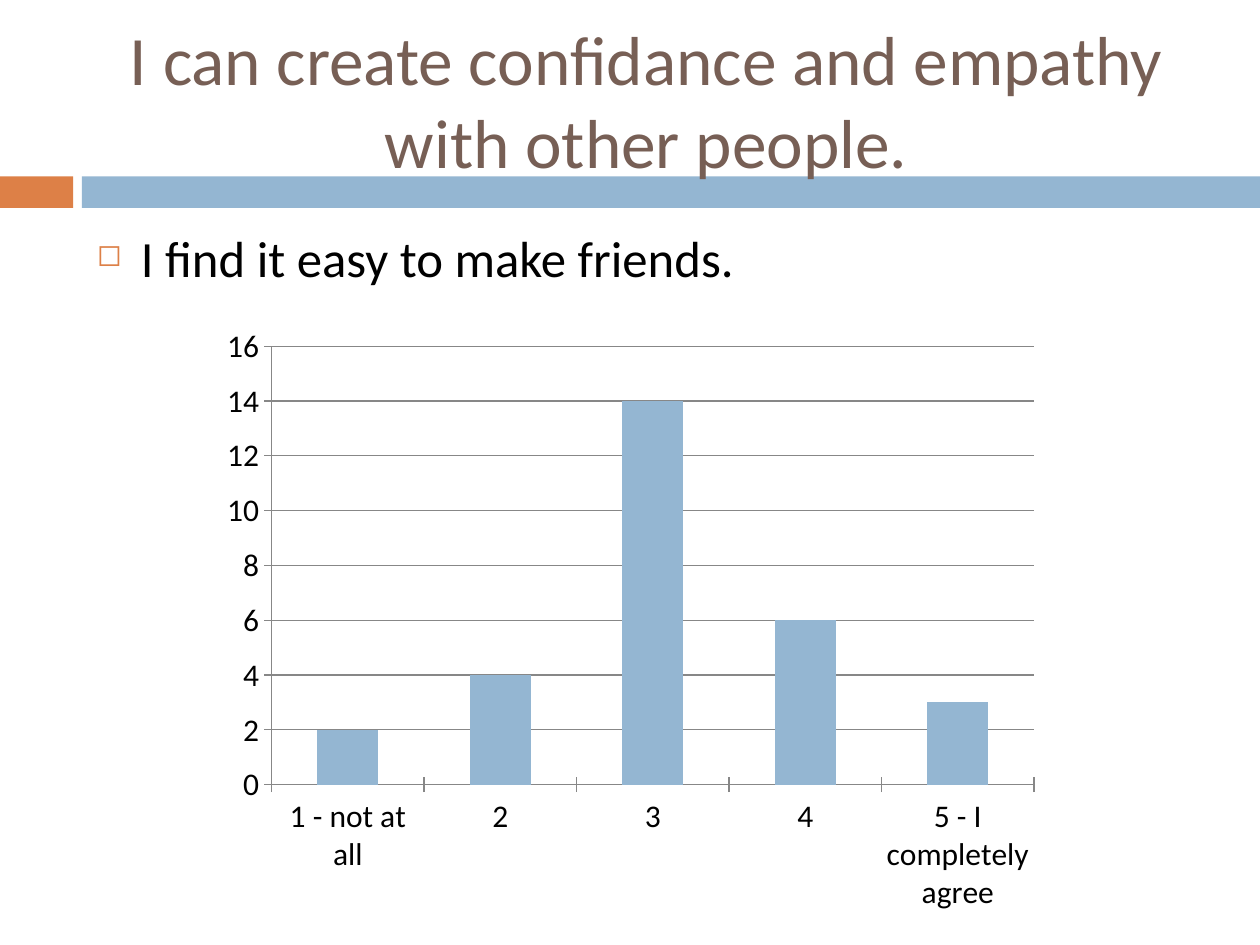
from dataclasses import dataclass

from lxml import etree
from pptx import Presentation
from pptx.chart.data import CategoryChartData
from pptx.dml.color import RGBColor
from pptx.enum.chart import XL_CHART_TYPE, XL_TICK_MARK
from pptx.enum.shapes import MSO_SHAPE
from pptx.enum.text import MSO_ANCHOR, PP_ALIGN
from pptx.oxml.ns import qn
from pptx.util import Inches, Pt

RECT = MSO_SHAPE.RECTANGLE
COLUMN = XL_CHART_TYPE.COLUMN_CLUSTERED
CROSS = XL_TICK_MARK.CROSS
MIDDLE, TOP = MSO_ANCHOR.MIDDLE, MSO_ANCHOR.TOP
CENTER, LEFT = PP_ALIGN.CENTER, PP_ALIGN.LEFT


@dataclass(frozen=True)
class Theme:
    font: str = "Calibri"
    orange: str = "DD8047"
    blue: str = "94B6D2"
    brown: str = "775F55"
    black: str = "000000"
    grid: str = "878787"
    title: float = 39.6
    body: float = 29
    chart: float = 18


@dataclass(frozen=True)
class Box:
    left: float
    top: float
    width: float
    height: float

    def place(self):
        return [Inches(n) for n in (self.left, self.top, self.width, self.height)]


@dataclass(frozen=True)
class Band:
    box: Box
    color: str


@dataclass(frozen=True)
class Label:
    box: Box
    text: str
    size: float
    color: str
    align: PP_ALIGN
    anchor: MSO_ANCHOR


THEME = Theme()
BANDS = [
    Band(Box(0, 1.4, 0.58, 0.25), THEME.orange),
    Band(Box(0.65, 1.4, 9.35, 0.25), THEME.blue),
]
TITLE = Label(Box(0.67, 0.25, 8.92, 1.08),
              "I can create confidance and empathy with other people.",
              THEME.title, THEME.brown, CENTER, MIDDLE)
POINT = Label(Box(0.67, 1.75, 8.92, 4.92), "I find it easy to make friends.",
              THEME.body, THEME.black, LEFT, TOP)
PLOT = Box(1.67, 2.5, 6.67, 4.83)
SCORES = {"1 - not at all": 2, "2": 4, "3": 14, "4": 6, "5 - I completely agree": 3}


def style(font, size: float, color: str) -> None:
    font.name = THEME.font
    font.size = Pt(size)
    font.color.rgb = RGBColor.from_string(color)


def draw_band(slide, band: Band) -> None:
    shape = slide.shapes.add_shape(RECT, *band.box.place())
    shape.shadow.inherit = False
    shape.fill.solid()
    shape.fill.fore_color.rgb = RGBColor.from_string(band.color)
    shape.line.fill.background()


def draw_label(slide, label: Label):
    """Draw a one-paragraph text box and return its paragraph."""
    frame = slide.shapes.add_textbox(*label.box.place()).text_frame
    frame.word_wrap = True
    frame.vertical_anchor = label.anchor
    frame.text = label.text
    para = frame.paragraphs[0]
    para.alignment = label.align
    style(para.runs[0].font, label.size, label.color)
    return para


def add_bullet(para, mark: str, color: str, percent: int, indent: float) -> None:
    para.space_before = Pt(7)
    props = para._p.get_or_add_pPr()
    props.set("marL", str(Inches(indent)))
    props.set("indent", str(-Inches(indent)))
    tint = etree.SubElement(props, qn("a:buClr"))
    etree.SubElement(tint, qn("a:srgbClr"), val=color)
    etree.SubElement(props, qn("a:buSzPct"), val=str(percent * 1000))
    etree.SubElement(props, qn("a:buChar"), char=mark)


def draw_chart(slide, box: Box, scores: dict[str, int]) -> None:
    data = CategoryChartData()
    data.categories = list(scores)
    data.add_series("Series 1", list(scores.values()))
    chart = slide.shapes.add_chart(COLUMN, *box.place(), data).chart
    chart.has_legend = False
    chart.has_title = False
    style(chart.font, THEME.chart, THEME.black)

    plot = chart.plots[0]
    plot.gap_width = 150
    plot.vary_by_categories = False
    fill = plot.series[0].format.fill
    fill.solid()
    fill.fore_color.rgb = RGBColor.from_string(THEME.blue)

    axes = (chart.category_axis, chart.value_axis)
    for axis in axes:
        axis.major_tick_mark = CROSS
    chart.value_axis.has_major_gridlines = True
    for part in (*axes, chart.value_axis.major_gridlines):
        part.format.line.color.rgb = RGBColor.from_string(THEME.grid)
        part.format.line.width = Pt(0.75)


def main() -> None:
    deck = Presentation()
    deck.slide_width, deck.slide_height = Inches(10), Inches(7.5)
    slide = deck.slides.add_slide(deck.slide_layouts[6])
    for band in BANDS:
        draw_band(slide, band)
    draw_label(slide, TITLE)
    add_bullet(draw_label(slide, POINT), "◻", THEME.orange, 60, 0.35)
    draw_chart(slide, PLOT, SCORES)
    deck.save("out.pptx")


if __name__ == "__main__":
    main()
